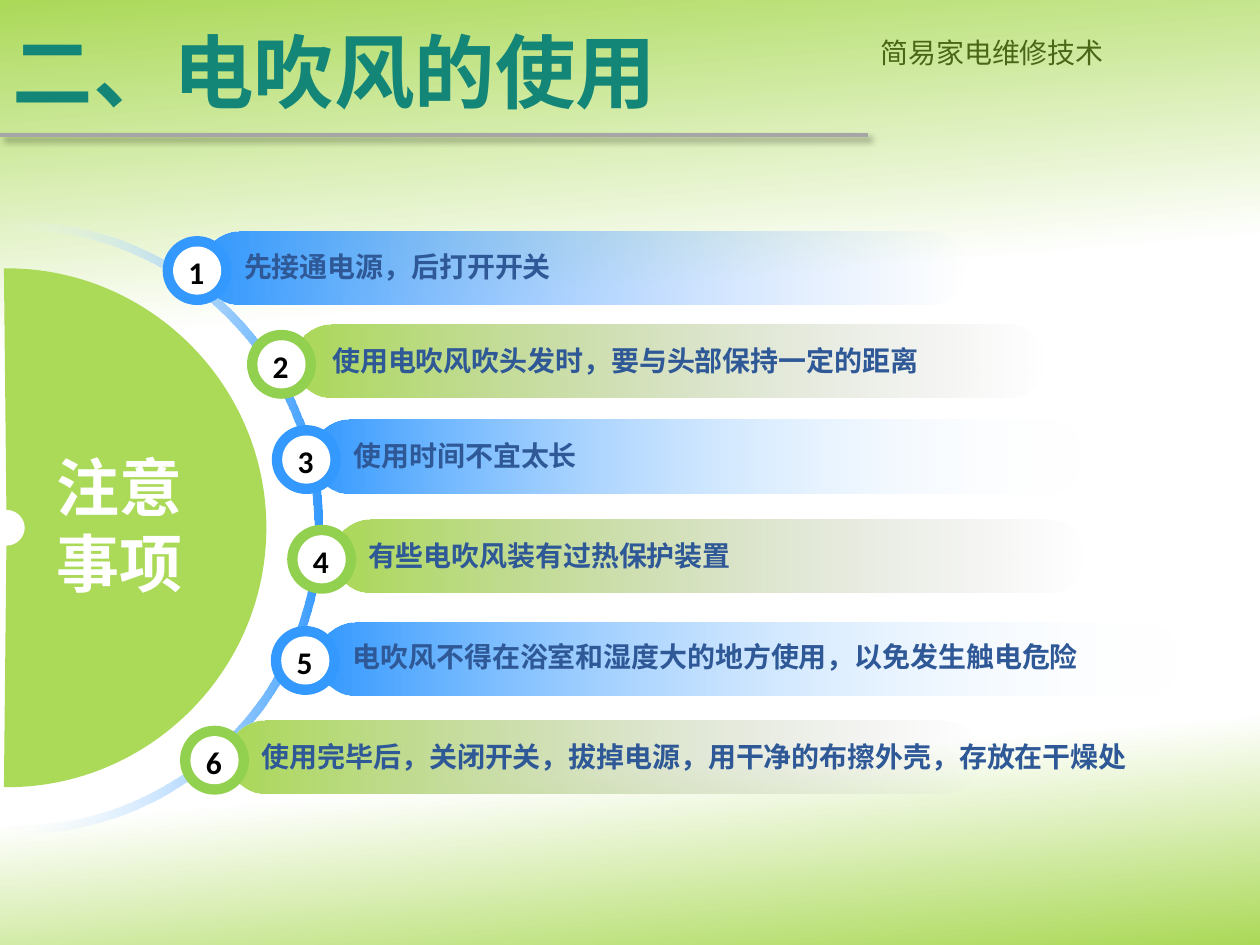
from dataclasses import dataclass

from lxml.etree import SubElement
from pptx import Presentation
from pptx.dml.color import RGBColor
from pptx.enum.shapes import MSO_CONNECTOR, MSO_SHAPE as SHAPE
from pptx.enum.text import MSO_ANCHOR as ANCHOR, PP_ALIGN as ALIGN
from pptx.oxml.ns import qn
from pptx.util import Cm, Pt


@dataclass(frozen=True)
class Theme:
    green: str = "ABD958"
    ring_green: str = "92D050"
    blue: str = "3399FF"
    pale_blue: str = "95BCFF"
    grey: str = "B5B5B5"
    rule: str = "A6A6A6"
    white: str = "FFFFFF"
    black: str = "000000"
    title: str = "138677"
    course: str = "4A6717"
    label: str = "2F5897"
    cjk: str = "Noto Sans CJK SC"
    latin: str = "Calibri"
    title_size: int = 46
    topic_size: int = 36
    number_size: int = 18
    body_size: int = 16


T = Theme()


def set_gradient(fill, props, stops, angle=0):
    """Fill with (position %, colour, opacity %) stops; props holds the fill's XML."""
    fill.gradient()
    grad = props.find(qn("a:gradFill"))
    for child in list(grad):
        grad.remove(child)
    gs_list = SubElement(grad, qn("a:gsLst"))
    for pos, color, opacity in stops:
        gs = SubElement(gs_list, qn("a:gs"), pos=str(pos * 1000))
        clr = SubElement(gs, qn("a:srgbClr"), val=color)
        if opacity < 100:
            SubElement(clr, qn("a:alpha"), val=str(opacity * 1000))
    SubElement(grad, qn("a:lin"), ang=str(angle * 60000), scaled="0")


def write(sp, text, size, color, font=T.cjk, bold=True, align=ALIGN.LEFT,
          wrap=True, anchor=ANCHOR.TOP):
    tf = sp.text_frame
    tf.word_wrap = wrap
    tf.vertical_anchor = anchor
    p = tf.paragraphs[0]
    p.alignment = align
    r = p.add_run()
    r.text = text
    r.font.size = Pt(size)
    r.font.bold = bold
    r.font.color.rgb = RGBColor.from_string(color)
    r.font.name = font
    SubElement(r.font._element, qn("a:ea"), typeface=T.cjk)


prs = Presentation()
prs.slide_width, prs.slide_height = Cm(25.4), Cm(19.05)
s = prs.slides.add_slide(prs.slide_layouts[5])
shapes = s.shapes

bg_fill = s.background.fill
bg_fill.solid()
set_gradient(bg_fill, s.element.find(".//" + qn("p:bgPr")),
             [(0, T.green, 100), (33, T.white, 100), (52, T.white, 100),
              (78, T.white, 100), (100, T.green, 100)], angle=85)

# Header
rule = shapes.add_connector(MSO_CONNECTOR.STRAIGHT, 0, Cm(2.72), Cm(17.5), Cm(2.72))
rule.line.color.rgb = RGBColor.from_string(T.rule)
rule.line.width = Pt(2.25)
effects = SubElement(rule._element.spPr, qn("a:effectLst"))
shadow = SubElement(effects, qn("a:outerShdw"), blurRad=str(Pt(4)), dist=str(Pt(3)),
                    dir=str(45 * 60000), algn="tl", rotWithShape="0")
SubElement(SubElement(shadow, qn("a:srgbClr"), val=T.black), qn("a:alpha"), val="40000")

title = shapes.title
title.left, title.top, title.width, title.height = 0, Cm(0.13), Cm(17.5), Cm(2.59)
write(title, "二、电吹风的使用", T.title_size, T.title, anchor=ANCHOR.MIDDLE)

course = shapes.add_textbox(Cm(17.5), Cm(0.6), Cm(7.9), Cm(0.94))
write(course, "简易家电维修技术", T.body_size, T.course, bold=False, align=ALIGN.JUSTIFY)

# Half rings: centre x, then radius and left end of the outer and the inner edge
CENTER_Y = 10.64
KAPPA = 0.55  # control-point distance for a quarter circle of radius 1
half_rings = []
for cx, *edges in [(0.33, (6.17, 0.13), (5.99, 0.13)), (0.14, (5.23, 0.08), (0.36, 0.13))]:
    outline = []
    for radius, end_x in edges:
        quarter = [(0, -1), (KAPPA, -1), (1, -KAPPA), (1, 0)]
        half = quarter + [(x, -y) for x, y in quarter[-2::-1]]
        arc = [(cx + radius * x, CENTER_Y + radius * y) for x, y in half]
        top, bottom = (end_x, CENTER_Y - radius), (end_x, CENTER_Y + radius)
        edge = [top, top, arc[0], *arc, arc[-1], bottom, bottom]
        outline += edge[::-1] if outline else edge
    points = [(Cm(x), Cm(y)) for x, y in outline]
    builder = shapes.build_freeform(*points[0])
    builder.add_line_segments(points[1:], close=True)
    sp = builder.convert_to_shape()
    sp.shadow.inherit = False
    sp.line.fill.background()
    # Each edge is four curves of three points; a straight line joins the edges
    lines = sp._element.findall(".//" + qn("a:lnTo"))
    for first in [0, 3, 6, 9, 13, 16, 19, 22]:
        curve = lines[first].makeelement(qn("a:cubicBezTo"))
        lines[first].addprevious(curve)
        for line in lines[first:first + 3]:
            curve.append(line[0])
            line.getparent().remove(line)
    half_rings.append(sp)
track, disc = half_rings
set_gradient(track.fill, track._element.spPr, [(0, T.white, 5), (100, T.blue, 100)])
disc.fill.solid()
disc.fill.fore_color.rgb = RGBColor.from_string(T.green)

topic = shapes.add_textbox(Cm(0.86), Cm(8.92), Cm(3.12), Cm(3.33))
write(topic, "注意事项", T.topic_size, T.white, align=ALIGN.CENTER)

# Precautions: text, bar left, top and width, badge left and top, label left, bar end
precautions = [
    ("先接通电源，后打开开关", 4.09, 4.66, 15.39, 3.28, 4.76, 4.67, T.pale_blue),
    ("使用电吹风吹头发时，要与头部保持一定的距离",
     5.94, 6.54, 15.14, 4.98, 6.65, 6.45, T.grey),
    ("使用时间不宜太长", 6.3, 8.46, 15.52, 5.48, 8.57, 6.88, T.white),
    ("有些电吹风装有过热保护装置", 6.73, 10.47, 15.14, 5.79, 10.58, 7.17, T.grey),
    ("电吹风不得在浴室和湿度大的地方使用，以免发生触电危险",
     6.43, 12.55, 17.35, 5.46, 12.62, 6.86, T.white),
    ("使用完毕后，关闭开关，拔掉电源，用干净的布擦外壳，存放在干燥处",
     4.6, 14.52, 15.14, 3.63, 14.63, 5.03, T.grey),
]
for number, row in enumerate(precautions, 1):
    text, bar_x, bar_y, bar_w, badge_x, badge_y, label_x, end = row
    start, ring = (T.blue, T.blue) if number % 2 else (T.green, T.ring_green)
    bar = shapes.add_shape(SHAPE.ROUNDED_RECTANGLE,
                           Cm(bar_x), Cm(bar_y), Cm(bar_w), Cm(1.48))
    bar.adjustments[0] = 0.5
    bar.shadow.inherit = False
    bar.line.fill.background()
    set_gradient(bar.fill, bar._element.spPr, [(0, start, 100), (100, end, 0)])

    for inset, size, color in [(0, 1.39, ring), (0.21, 0.97, T.white)]:
        circle = shapes.add_shape(SHAPE.OVAL, Cm(badge_x + inset), Cm(badge_y + inset),
                                  Cm(size), Cm(size))
        circle.shadow.inherit = False
        circle.line.fill.background()
        circle.fill.solid()
        circle.fill.fore_color.rgb = RGBColor.from_string(color)

    digit = shapes.add_textbox(Cm(badge_x + 0.25), Cm(badge_y + 0.22), Cm(0.86), Cm(1.02))
    write(digit, str(number), T.number_size, T.black, font=T.latin,
          align=ALIGN.CENTER, wrap=False)
    label = shapes.add_textbox(Cm(label_x), Cm(badge_y + 0.15),
                               Cm(0.57 * len(text) + 0.55), Cm(0.94))
    write(label, text, T.body_size, T.label, font=T.latin, wrap=False)

prs.save("out.pptx")
